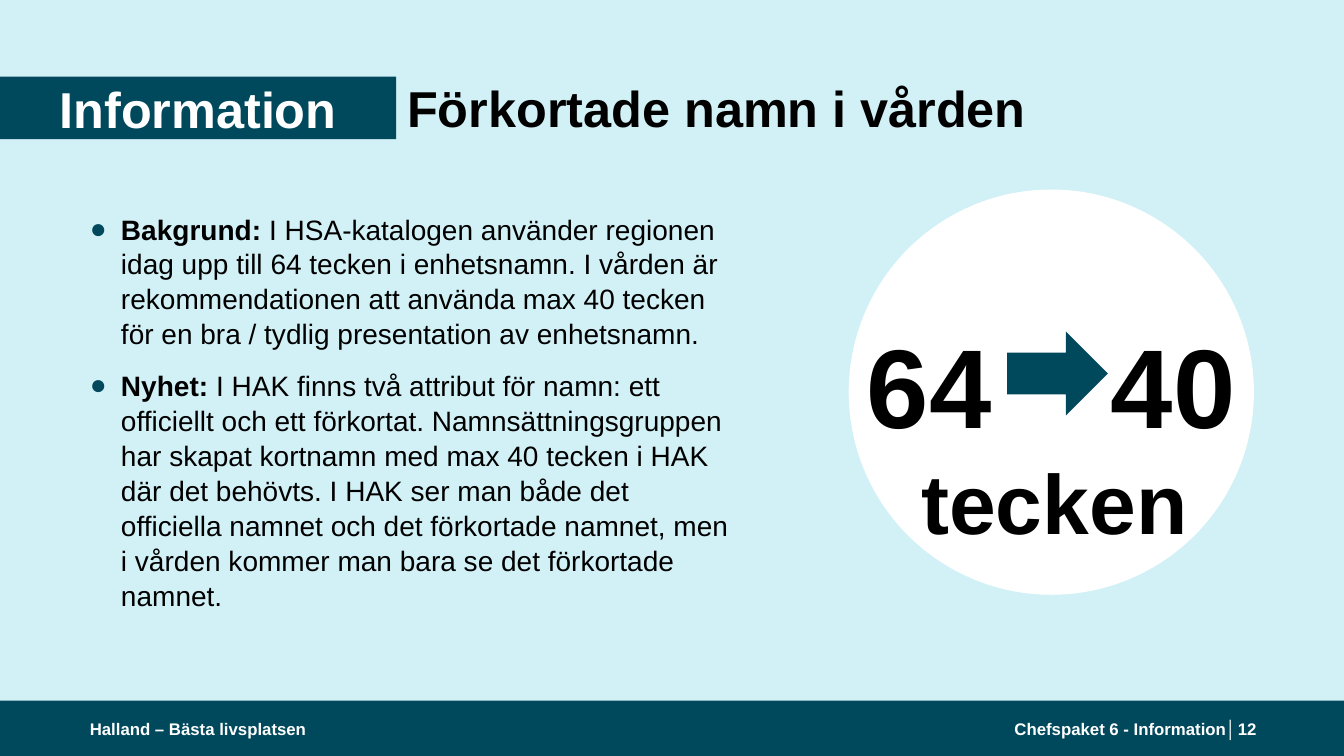
from dataclasses import dataclass

from lxml import etree
from pptx import Presentation
from pptx import util as u
from pptx.dml.color import RGBColor
from pptx.enum import shapes, text
from pptx.oxml.ns import qn

WIDTH, HEIGHT = u.Inches(13.33), u.Inches(7.5)
SHAPE, ALIGN, ANCHOR = shapes.MSO_SHAPE, text.PP_ALIGN, text.MSO_ANCHOR


@dataclass(frozen=True)
class Theme:
    font: str = "Arial"
    sky: str = "D2F1F6"
    petrol: str = "00495D"
    white: str = "FFFFFF"
    black: str = "000000"
    footer: int = 12
    body: int = 20
    title: int = 36
    unit: int = 60
    number: int = 80


THEME = Theme()


def place(left, top, width, height):
    """Turn percentages of the slide's width and height into lengths."""
    return [round(share * side / 100) for share, side in
            zip((left, top, width, height), (WIDTH, HEIGHT) * 2)]


def add_filled(page, kind, area, color):
    shape = page.shapes.add_shape(kind, *place(*area))
    shape.shadow.inherit = False
    shape.fill.solid()
    shape.fill.fore_color.rgb = RGBColor.from_string(color)
    shape.line.fill.background()
    return shape


def add_bullet(para):
    indent = u.Inches(0.31)
    props = para._p.get_or_add_pPr()
    props.set("marL", str(indent))
    props.set("indent", str(-indent))
    color = etree.SubElement(props, qn("a:buClr"))
    etree.SubElement(color, qn("a:srgbClr"), val=THEME.petrol)
    etree.SubElement(props, qn("a:buFont"), typeface=THEME.font)
    etree.SubElement(props, qn("a:buChar"), char="●")


def add_tab(para, position):
    stops = etree.SubElement(para._p.get_or_add_pPr(), qn("a:tabLst"))
    etree.SubElement(stops, qn("a:tab"), pos=str(position), algn="l")


def write(shape, *paragraphs, size, color=THEME.black, align=ALIGN.LEFT,
          anchor=ANCHOR.MIDDLE, bullet=False, tab=None, gap=0, spacing=None):
    """Fill a shape; each paragraph is a list of (text, bold[, size]) spans."""
    frame = shape.text_frame
    frame.word_wrap = True
    frame.vertical_anchor = anchor
    frame.margin_left = frame.margin_right = 0
    frame.margin_top = frame.margin_bottom = 0
    for index, spans in enumerate(paragraphs):
        para = frame.paragraphs[0] if index == 0 else frame.add_paragraph()
        if bullet:
            add_bullet(para)
        if tab and index == 0:
            add_tab(para, tab)
        para.alignment = ALIGN.CENTER if tab and index else align
        if index:
            para.space_before = u.Pt(gap)
        if spacing:
            para.line_spacing = spacing
        for words, bold, *own_size in spans:
            span = para.add_run()
            span.text = words
            span.font.name = THEME.font
            span.font.size = u.Pt(own_size[0] if own_size else size)
            span.font.bold = bold
            span.font.color.rgb = RGBColor.from_string(color)


def add_text(page, area, *paragraphs, **style):
    write(page.shapes.add_textbox(*place(*area)), *paragraphs, **style)


def add_footer(page):
    add_filled(page, SHAPE.RECTANGLE, (0, 92.67, 100, 7.33), THEME.petrol)
    for left, width, words, align in (
            (6.68, 33.75, "Halland – Bästa livsplatsen", ALIGN.LEFT),
            (74.93, 17.1, "Chefspaket 6 - Information│", ALIGN.RIGHT),
            (92.1, 1.8, "12", ALIGN.LEFT)):
        add_text(page, (left, 94.13, width, 4.67), [(words, True)],
                 size=THEME.footer, color=THEME.white, align=align)


def add_heading(page):
    banner = add_filled(page, SHAPE.RECTANGLE, (0, 10.13, 29.48, 8.27), THEME.petrol)
    write(banner, [("Information", True)], size=THEME.title,
          color=THEME.white, align=ALIGN.CENTER)
    add_text(page, (30.3, 4.8, 67.5, 18.93),
             [("Förkortade namn i vården", True)], size=THEME.title)


def add_count(page):
    add_filled(page, SHAPE.OVAL, (63.15, 25.07, 30.15, 53.6), THEME.white)
    add_text(page, (64.5, 41.87, 27.9, 31),
             [("64\t40", True)], [("tecken", True, THEME.unit)],
             size=THEME.number, anchor=ANCHOR.TOP, tab=u.Inches(2.42))
    add_filled(page, SHAPE.RIGHT_ARROW, (74.93, 43.87, 7.5, 11.07), THEME.petrol)


def main():
    deck = Presentation()
    deck.slide_width, deck.slide_height = WIDTH, HEIGHT
    page = deck.slides.add_slide(deck.slide_layouts[6])
    page.background.fill.solid()
    page.background.fill.fore_color.rgb = RGBColor.from_string(THEME.sky)
    add_footer(page)
    add_heading(page)
    add_text(
        page, (6.68, 27.87, 47.93, 62),
        [("Bakgrund:", True),
         (" I HSA-katalogen använder regionen idag upp till 64 tecken i "
          "enhetsnamn. I vården är rekommendationen att använda max 40 tecken "
          "för en bra / tydlig presentation av enhetsnamn.", False)],
        [("Nyhet:", True),
         (" I HAK finns två attribut för namn: ett officiellt och ett "
          "förkortat. Namnsättningsgruppen har skapat kortnamn med max 40 "
          "tecken i HAK där det behövts. I HAK ser man både det officiella "
          "namnet och det förkortade namnet, men i vården kommer man bara se "
          "det förkortade namnet.", False)],
        size=THEME.body, anchor=ANCHOR.TOP, bullet=True, gap=12, spacing=1.04)
    add_count(page)
    deck.save("out.pptx")


if __name__ == "__main__":
    main()
